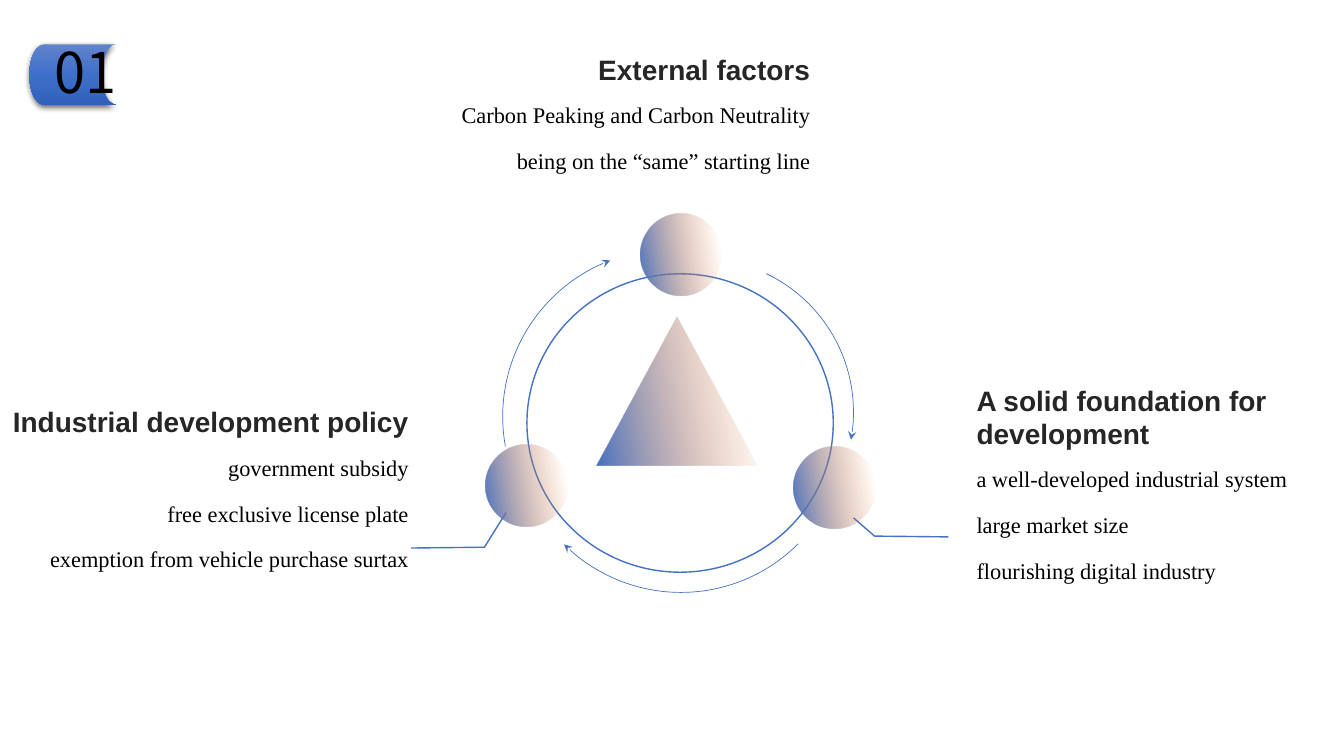
from dataclasses import dataclass

from lxml import etree
from pptx import Presentation
from pptx.dml.color import RGBColor
from pptx.enum.shapes import MSO_SHAPE
from pptx.enum.text import MSO_AUTO_SIZE, PP_ALIGN
from pptx.oxml.ns import qn
from pptx.util import Cm, Pt

ARC, OVAL = MSO_SHAPE.ARC, MSO_SHAPE.OVAL
TRIANGLE = MSO_SHAPE.ISOSCELES_TRIANGLE
STORED_DATA = MSO_SHAPE.FLOWCHART_STORED_DATA
FIT_SHAPE = MSO_AUTO_SIZE.SHAPE_TO_FIT_TEXT
LEFT, RIGHT = PP_ALIGN.LEFT, PP_ALIGN.RIGHT


@dataclass(frozen=True)
class Theme:
    """Colours, fonts and type sizes of the slide."""
    accent: str = "4472C4"
    heading_color: str = "262626"
    text_color: str = "000000"
    badge_stops: tuple = ((0, "6183CB", 100), (50, "3E70CA", 100), (100, "3062BB", 100))
    node_stops: tuple = ((0, "4472C4", 100), (93, "ED7D31", 0))
    heading_font: str = "Arial"
    body_font: str = "Times New Roman"
    number_font: str = "Noto Sans CJK SC"
    heading_size: int = 20
    body_size: int = 16
    number_size: int = 40
    body_spacing: float = 1.7


THEME = Theme()


def add_node(parent, tag, **attributes):
    """Append a drawing element with the given attributes."""
    node = etree.SubElement(parent, qn(tag))
    for name, value in attributes.items():
        node.set(name, str(value))
    return node


def add_color(parent, color, opacity):
    """Append a colour with its opacity in percent."""
    node = add_node(parent, "a:srgbClr", val=color)
    if opacity < 100:
        add_node(node, "a:alpha", val=opacity * 1000)


def fill_gradient(shape, stops, angle):
    """Fill a shape with a linear gradient, its angle clockwise in degrees."""
    shape.fill.solid()
    solid = shape.element.spPr.find(qn("a:solidFill"))
    gradient = etree.Element(qn("a:gradFill"), rotWithShape="1")
    stop_list = add_node(gradient, "a:gsLst")
    for position, color, opacity in stops:
        add_color(add_node(stop_list, "a:gs", pos=position * 1000), color, opacity)
    add_node(gradient, "a:lin", ang=angle * 60000, scaled=0)
    solid.getparent().replace(solid, gradient)


def add_filled(slide, kind, left, top, width, height, stops, angle):
    """Add a preset shape with a gradient fill and no line."""
    shape = slide.shapes.add_shape(kind, Cm(left), Cm(top), Cm(width), Cm(height))
    shape.shadow.inherit = False
    fill_gradient(shape, stops, angle)
    shape.line.fill.background()
    return shape


def style_outline(shape, width):
    """Leave only an accent outline on a shape."""
    shape.shadow.inherit = False
    shape.fill.background()
    shape.line.color.rgb = RGBColor.from_string(THEME.accent)
    shape.line.width = Pt(width)


def add_text(slide, box, lines, font, size, color, alignment=LEFT, bold=False,
             spacing=None, wrap=True):
    """Add a text box with one paragraph per line."""
    shape = slide.shapes.add_textbox(*(Cm(length) for length in box))
    frame = shape.text_frame
    frame.word_wrap = wrap
    frame.auto_size = FIT_SHAPE
    frame.text = "\n".join(lines)
    for paragraph in frame.paragraphs:
        paragraph.alignment = alignment
        paragraph.line_spacing = spacing
        for run in paragraph.runs:
            run.font.name = font
            run.font.size = Pt(size)
            run.font.bold = bold
            run.font.color.rgb = RGBColor.from_string(color)


def add_badge(slide, box, number):
    """Add the section number on its shaded badge."""
    left, top, width, height = box
    badge = add_filled(slide, STORED_DATA, *box, THEME.badge_stops, 90)
    effects = badge.element.spPr.find(qn("a:effectLst"))
    shadow = add_node(effects, "a:outerShdw", blurRad=Pt(4.5), dist=Pt(1.5),
                      dir=90 * 60000, algn="ctr", rotWithShape=0)
    add_color(shadow, "000000", 63)
    add_text(slide, (left + 0.38, top - 0.31, width, height + 0.44), [number],
             THEME.number_font, THEME.number_size, THEME.text_color, wrap=False)


def add_factor(slide, box, heading, items, body_offset, alignment):
    """Add a bold heading with its list of points below."""
    left, top, width, height = box
    add_text(slide, (left, top, width, body_offset), [heading], THEME.heading_font,
             THEME.heading_size, THEME.heading_color, alignment, bold=True)
    add_text(slide, (left, top + body_offset, width, height - body_offset), items,
             THEME.body_font, THEME.body_size, THEME.text_color, alignment,
             spacing=THEME.body_spacing)


def add_cycle(slide, box):
    """Add the ring with its arrows, triangle, nodes and callout lines."""
    left, top = box[:2]
    ring = slide.shapes.add_shape(OVAL, Cm(left + 2.92), Cm(top + 1.52), Cm(7.72), Cm(7.52))
    style_outline(ring, 1)

    arrows = ((2.31, 0.91, 8.41, 169.63, 249.17),
              (3.43, 1.14, 7.72, 295.55, 10.46),
              (2.62, 1.19, 8.36, 45, 134.74))
    for x, y, size, start, end in arrows:
        arrow = slide.shapes.add_shape(ARC, Cm(left + x), Cm(top + y), Cm(size), Cm(size))
        arrow.adjustments[0] = start * 0.6
        arrow.adjustments[1] = end * 0.6
        style_outline(arrow, 0.5)
        add_node(arrow.element.spPr.find(qn("a:ln")), "a:tailEnd", type="stealth")

    add_filled(slide, TRIANGLE, left + 4.67, top + 2.59, 4.06, 3.76, THEME.node_stops, 350)

    callouts = (((2.39, 7.54), (1.85, 8.41), (0, 8.43)),
                ((11.15, 7.67), (11.68, 8.13), (13.54, 8.15)))
    for callout in callouts:
        start, *others = [(Cm(left + x), Cm(top + y)) for x, y in callout]
        builder = slide.shapes.build_freeform(*start)
        builder.add_line_segments(others, close=False)
        style_outline(builder.convert_to_shape(), 1)

    for x, y in ((5.77, 0), (9.63, 5.87), (1.88, 5.82)):
        add_filled(slide, OVAL, left + x, top + y, 2.06, 2.06, THEME.node_stops, 350)


def main():
    """Build the slide and save it."""
    presentation = Presentation()
    presentation.slide_width = Cm(33.87)
    presentation.slide_height = Cm(19.05)
    slide = presentation.slides.add_slide(presentation.slide_layouts[6])

    add_badge(slide, (0.74, 1.12, 2.18, 1.52), "01")
    add_factor(slide, (24.36, 9.53, 9.4, 5.31), "A solid foundation for development",
               ["a well-developed industrial system", "large market size",
                "flourishing digital industry"], 1.6, LEFT)
    add_factor(slide, (11.25, 1.19, 9.42, 4.48), "External factors",
               ["Carbon Peaking and Carbon Neutrality",
                "being on the “same” starting line"], 0.77, RIGHT)
    add_factor(slide, (0, 10.08, 10.55, 4.48), "Industrial development policy",
               ["government subsidy", "free exclusive license plate",
                "exemption from vehicle purchase surtax"], 0.77, RIGHT)
    add_cycle(slide, (10.36, 5.38, 13.54, 9.55))

    presentation.save("out.pptx")


if __name__ == "__main__":
    main()
